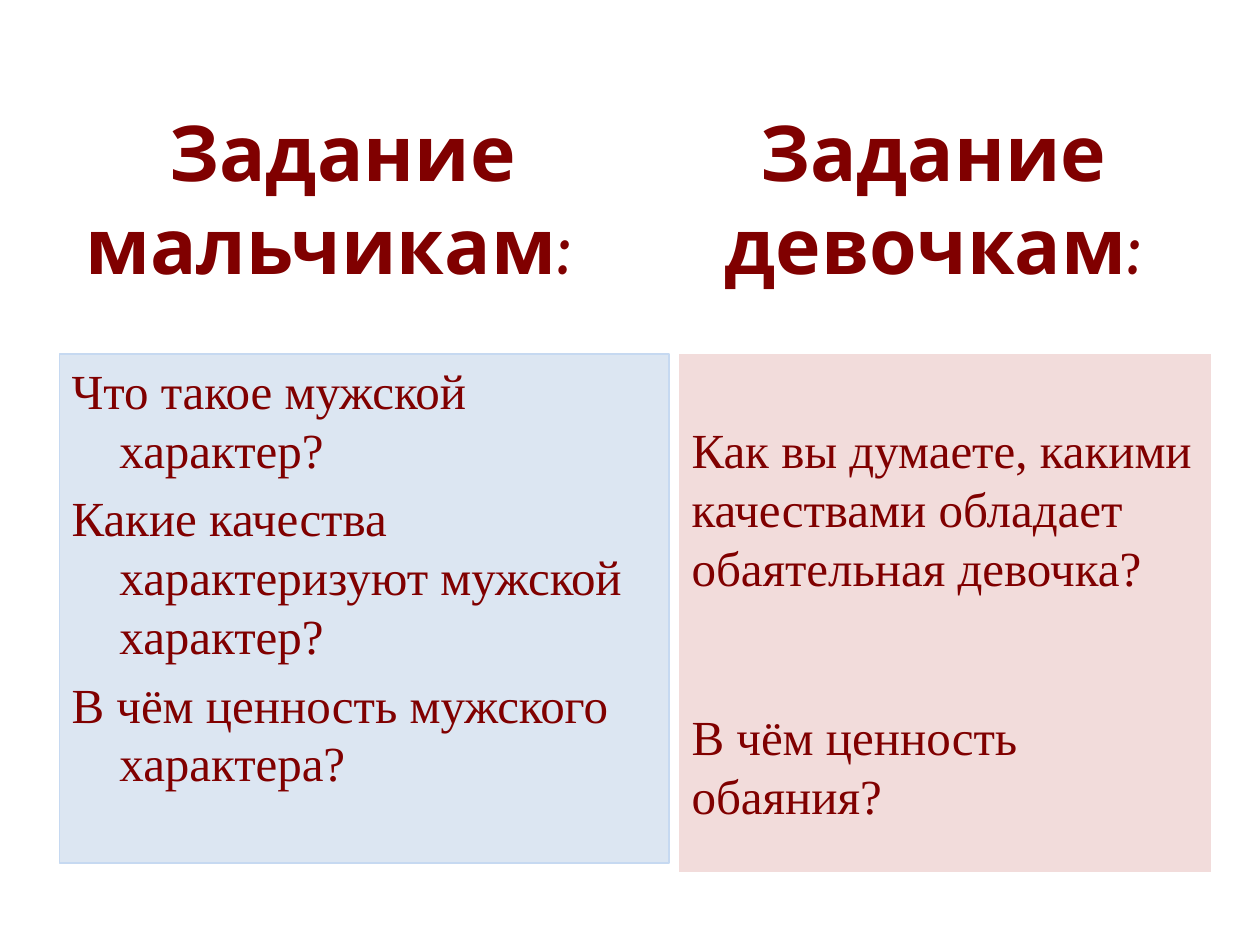
from dataclasses import dataclass
from pptx import Presentation
from pptx.dml.color import RGBColor as RGB
from pptx.enum.shapes import MSO_SHAPE as Kind
from pptx.enum.text import MSO_ANCHOR as Anchor, MSO_AUTO_SIZE as Auto, PP_ALIGN as Align
from pptx.util import Inches, Pt


@dataclass(frozen=True)
class Theme:
    ink: RGB = RGB(0x80, 0x00, 0x00)
    blue: RGB = RGB(0xDC, 0xE6, 0xF2)
    edge: RGB = RGB(0xC6, 0xD9, 0xF1)
    pink: RGB = RGB(0xF2, 0xDC, 0xDB)
    head: str = "Comic Neue"
    body: str = "Times New Roman"
    big: int = 44
    text: int = 28


LOOK = Theme()


def write(shape, lines, font=LOOK.body, size=LOOK.text, bold=False,
          align=Align.LEFT, anchor=Anchor.TOP, gap=0, hang=0, top=0.05):
    """Fill a shape with paragraphs; gap in points, hang and top in inches."""
    frame = shape.text_frame
    frame.word_wrap = True
    frame.auto_size = Auto.NONE
    frame.vertical_anchor = anchor
    frame.margin_left = frame.margin_right = Inches(0.1)
    frame.margin_top, frame.margin_bottom = Inches(top), Inches(0.05)
    for i, line in enumerate(lines):
        para = frame.add_paragraph() if i else frame.paragraphs[0]
        para.alignment = align
        para.space_before = Pt(gap if i else 0)
        if hang:
            props = para._p.get_or_add_pPr()
            props.set("marL", str(Inches(hang)))
            props.set("indent", str(Inches(-hang)))
        run = para.add_run()
        run.text = line
        run.font.name, run.font.size = font, Pt(size)
        run.font.bold = bold
        run.font.color.rgb = LOOK.ink


def place(shape, box):
    shape.left, shape.top, shape.width, shape.height = map(Inches, box)


def head(shape, box, text):
    place(shape, box)
    write(shape, [text], font=LOOK.head, size=LOOK.big, bold=True,
          align=Align.CENTER, anchor=Anchor.MIDDLE)


def panel(slide, box, lines, fill, edge=None, **form):
    card = slide.shapes.add_shape(Kind.RECTANGLE, *map(Inches, box))
    card.shadow.inherit = False
    card.fill.solid()
    card.fill.fore_color.rgb = fill
    if edge:
        card.line.color.rgb = edge
        card.line.width = Pt(0.75)
    else:
        card.line.fill.background()
    write(card, lines, **form)


def main():
    deck = Presentation()
    deck.slide_width, deck.slide_height = Inches(10), Inches(7.5)
    slide = deck.slides.add_slide(deck.slide_layouts[5])

    # Boys: heading and questions
    head(slide.shapes.title, (0.47, 0.94, 4.5, 1.25), "Задание мальчикам: ")
    panel(slide, (0.47, 2.81, 4.84, 4.04),
          ["Что такое мужской характер?",
           "Какие качества характеризуют мужской характер?",
           "В чём ценность мужского характера?"],
          LOOK.blue, LOOK.edge, gap=5.6, hang=0.38)

    # Girls: heading and questions
    label = slide.shapes.add_textbox(0, 0, 0, 0)
    head(label, (5.16, 0.94, 4.5, 1.25), "Задание девочкам:")
    panel(slide, (5.39, 2.81, 4.22, 4.11),
          ["Как вы думаете, какими качествами обладает обаятельная девочка?",
           "В чём ценность обаяния?"],
          LOOK.pink, gap=63, top=0.52)

    deck.save("out.pptx")


if __name__ == "__main__":
    main()
